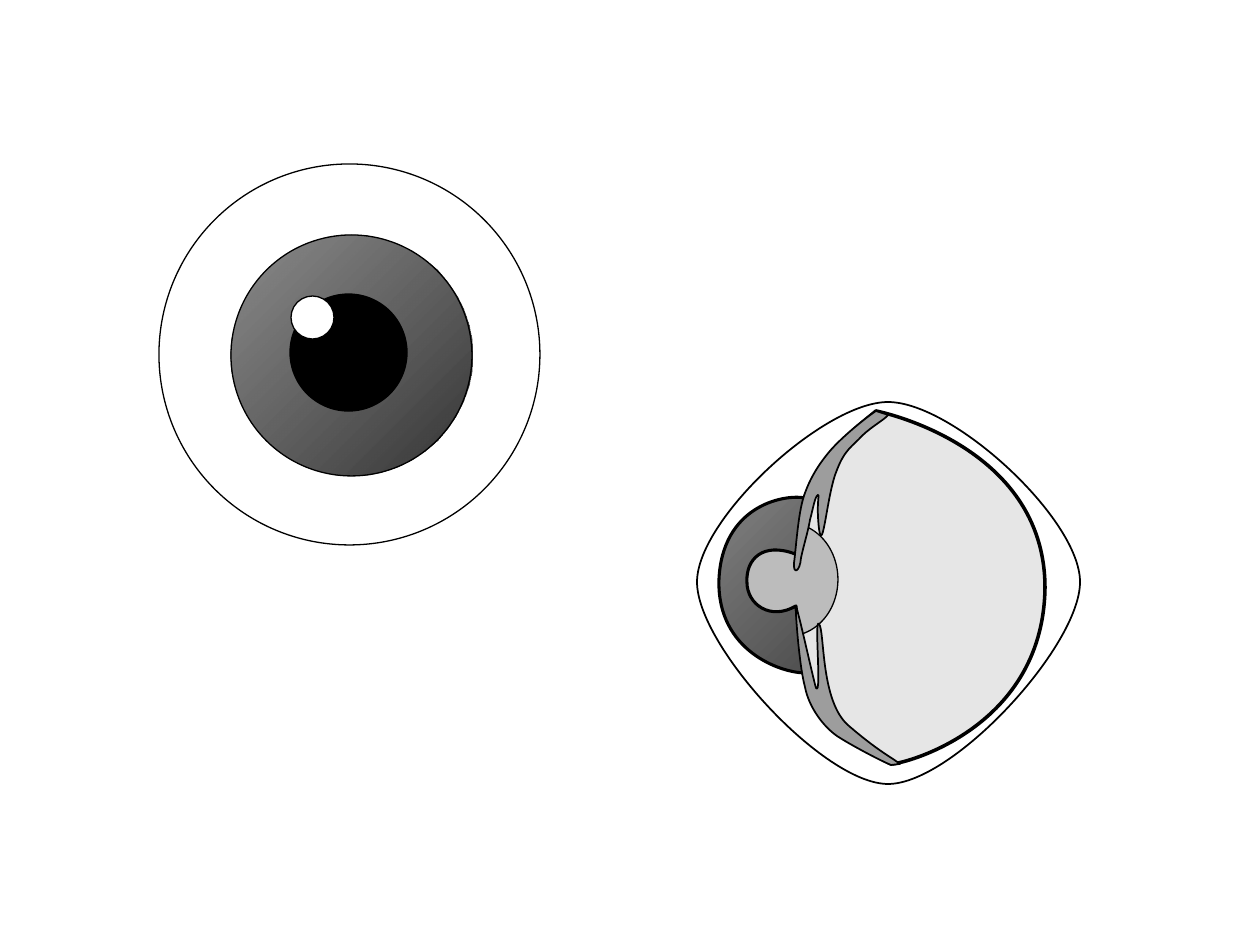
from lxml.etree import SubElement
from pptx import Presentation
from pptx.dml.color import RGBColor
from pptx.enum.shapes import MSO_SHAPE as Shape
from pptx.oxml.ns import qn
from pptx.util import Pt

PX = 914400 / 126
COLORS = {
    "white": "FFFFFF", "black": "000000", "vitreous": "E6E6E6",
    "lens": "BCBCBC", "ciliary": "9D9D9D",
    "side iris light": "808080", "side iris dark": "4E4E4E",
    "front iris light": "707070", "front iris dark": "343434",
}


def paint(shape, color, width):
    """Fill with one colour, or with a diagonal gradient for a pair of names."""
    shape.shadow.inherit = False
    if isinstance(color, tuple):
        shape.fill.gradient()
        shape.fill.gradient_angle = 315
        for stop, name in zip(shape.fill.gradient_stops, color):
            stop.color.rgb = RGBColor.from_string(COLORS[name])
    else:
        shape.fill.solid()
        shape.fill.fore_color.rgb = RGBColor.from_string(COLORS[color])
    shape.line.color.rgb = RGBColor.from_string(COLORS["black"])
    shape.line.width = Pt(width)


def add_curve(shapes, points, color, width):
    """Draw a closed outline: a start point, then three points per Bezier."""
    builder = shapes.build_freeform(*points[0], scale=PX)
    builder.add_line_segments(points[1:], close=True)
    shape = builder.convert_to_shape()
    lines = shape._element.findall(".//" + qn("a:lnTo"))
    for first, second, third in zip(lines[::3], lines[1::3], lines[2::3]):
        first.tag_name = None
        curve = first.getparent().makeelement(qn("a:cubicBezTo"))
        first.addprevious(curve)
        for line in (first, second, third):
            curve.append(line[0])
            line.getparent().remove(line)
    paint(shape, color, width)


presentation = Presentation()
presentation.slide_width = round(1260 * PX)
presentation.slide_height = round(945 * PX)
slide = presentation.slides.add_slide(presentation.slide_layouts[6])

# Side view: back to front, curves as point lists and the lens as a box
sclera = [
    (888, 784), (824, 784), (697, 646), (697, 582),
    (697, 519), (824, 402), (888, 402),
    (953, 402), (1080, 519), (1080, 582),
    (1080, 646), (953, 784), (888, 784),
]
vitreous = [
    (891, 764), (862, 750), (838, 732), (838, 732),
    (824, 717), (805, 699), (805, 673),
    (740, 654), (726, 609), (726, 587),
    (727, 567), (725, 512), (804, 498),
    (809, 490), (813, 475), (834, 450),
    (845, 436), (864, 421), (876, 411),
    (876, 411), (1045, 444), (1045, 588),
    (1043, 733), (895, 766), (891, 764),
]
iris = [
    (795, 554), (763, 542), (746, 559), (747, 582),
    (747, 605), (771, 621), (796, 606),
    (800, 640), (805, 673), (805, 673),
    (781, 673), (717, 651), (719, 580),
    (722, 507), (782, 494), (805, 498),
    (818, 494), (805, 539), (795, 554),
]
upper_ciliary = [
    (794, 563), (793, 575), (800, 572), (801, 558),
    (804, 544), (808, 532), (810, 520),
    (813, 509), (815, 496), (818, 495),
    (820, 493), (816, 503), (819, 529),
    (823, 556), (827, 493), (837, 470),
    (845, 449), (853, 446), (862, 436),
    (871, 427), (887, 418), (888, 415),
    (888, 415), (876, 411), (876, 411),
    (867, 417), (843, 436), (830, 451),
    (819, 464), (810, 478), (804, 496),
    (798, 514), (796, 549), (794, 563),
]
lower_ciliary = [
    (900, 764), (891, 757), (878, 751), (849, 726),
    (820, 702), (825, 630), (819, 624),
    (814, 617), (822, 697), (816, 688),
    (813, 678), (798, 609), (796, 607),
    (795, 607), (799, 665), (805, 687),
    (809, 708), (824, 727), (837, 736),
    (849, 744), (879, 760), (891, 765),
    (891, 765), (900, 764), (900, 764),
]
side_view = slide.shapes.add_group_shape().shapes
add_curve(side_view, sclera, "white", 1)
add_curve(side_view, vitreous, "vitreous", 2)
lens_box = [round(value * PX) for value in (740, 523, 98, 113)]
paint(side_view.add_shape(Shape.OVAL, *lens_box), "lens", 0.75)
add_curve(side_view, iris, ("side iris light", "side iris dark"), 1.75)
for ciliary_body in (upper_ciliary, lower_ciliary):
    add_curve(side_view, ciliary_body, "ciliary", 1)

# Front view: left, top, diameter and colour of each circle
front_view = slide.shapes.add_group_shape().shapes
for left, top, diameter, color in (
    (159, 164, 381, "white"),
    (231, 235, 241, ("front iris light", "front iris dark")),
    (290, 294, 117, "black"),
    (291, 296, 43, "white"),
):
    box = [round(value * PX) for value in (left, top, diameter, diameter)]
    circle = front_view.add_shape(Shape.OVAL, *box)
    paint(circle, color, 0.75)
    if isinstance(color, tuple):
        light_stop = circle._element.find(".//" + qn("a:gs"))
        SubElement(light_stop[0], qn("a:alpha"), val="82000")

presentation.save("out.pptx")
